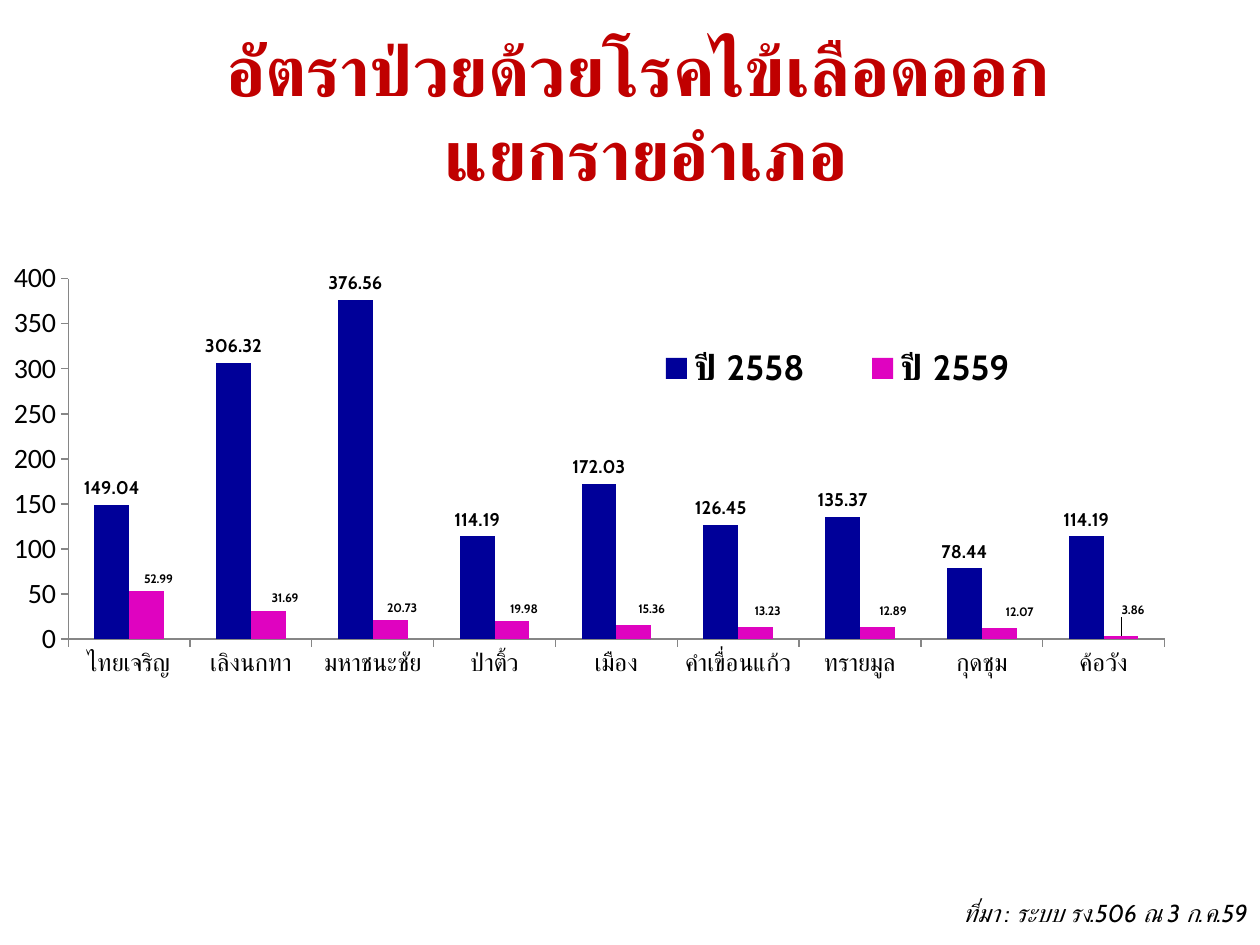
from lxml import etree
from pptx import Presentation
from pptx.chart.data import CategoryChartData
from pptx.dml.color import RGBColor
from pptx.enum.chart import XL_CHART_TYPE, XL_LABEL_POSITION, XL_LEGEND_POSITION, XL_TICK_MARK
from pptx.enum.text import MSO_ANCHOR, PP_ALIGN
from pptx.oxml.ns import qn
from pptx.util import Inches, Pt

COLUMNS = XL_CHART_TYPE.COLUMN_CLUSTERED
OUTSIDE_END = XL_LABEL_POSITION.OUTSIDE_END
LEGEND_RIGHT = XL_LEGEND_POSITION.RIGHT
TICK_NONE, TICK_OUT = XL_TICK_MARK.NONE, XL_TICK_MARK.OUTSIDE
CENTER, RIGHT = PP_ALIGN.CENTER, PP_ALIGN.RIGHT
MIDDLE, TOP = MSO_ANCHOR.MIDDLE, MSO_ANCHOR.TOP

DISTRICTS = ["ไทยเจริญ", "เลิงนกทา", "มหาชนะชัย", "ป่าติ้ว", "เมือง",
             "คำเขื่อนแก้ว", "ทรายมูล", "กุดชุม", "ค้อวัง"]
RATES = {
    "ปี 2558": [149.04, 306.32, 376.56, 114.19, 172.03, 126.45, 135.37, 78.44, 114.19],
    "ปี 2559": [52.99, 31.69, 20.73, 19.98, 15.36, 13.23, 12.89, 12.07, 3.86],
}
YEAR_COLORS = ["000099", "DF03C0"]
YEAR_LABEL_SIZES = [10.5, 7]
LABEL_SHIFTS = [(0.01, 0), (0.014, 0), (0.01, 0), (0.01, 0), (0.015, -0.01),
                (0.01, -0.01), (0.013, -0.01), (0.017, -0.01), (0.01, -0.03)]


def color(hex_value):
    return RGBColor.from_string(hex_value)


def manual_layout(x, y, w=None, h=None, inner=False):
    layout = etree.Element(qn("c:layout"))
    manual = etree.SubElement(layout, qn("c:manualLayout"))
    settings = [("layoutTarget", "inner" if inner else None)]
    if w is not None:
        settings += [("xMode", "edge"), ("yMode", "edge")]
    settings += [("x", x), ("y", y), ("w", w), ("h", h)]
    for tag, value in settings:
        if value is not None:
            etree.SubElement(manual, qn(f"c:{tag}")).set("val", str(value))
    return layout


class SlideWriter:
    display_font = "Cabin"
    number_font = "Calibri"
    ink = "000000"
    axis_line = "868686"

    def __init__(self, slide):
        self.slide = slide

    def style(self, font, size, name=display_font, hex_value=ink, bold=False, italic=False):
        font.size, font.name = Pt(size), name
        font.bold, font.italic = bold, italic
        font.color.rgb = color(hex_value)

    def text(self, words, left, top, width, height, size, align, anchor=TOP, **look):
        box = self.slide.shapes.add_textbox(
            Inches(left), Inches(top), Inches(width), Inches(height))
        frame = box.text_frame
        frame.word_wrap = True
        frame.vertical_anchor = anchor
        frame.text = words
        for paragraph in frame.paragraphs:
            paragraph.alignment = align
            for run in paragraph.runs:
                self.style(run.font, size, **look)
                complex_font = etree.SubElement(run.font._element, qn("a:cs"))
                complex_font.set("typeface", self.display_font)

    def column_chart(self, left, top, width, height):
        rates = CategoryChartData(number_format="0.00")
        rates.categories = DISTRICTS
        for year, values in RATES.items():
            rates.add_series(year, values)
        chart = self.slide.shapes.add_chart(
            COLUMNS, Inches(left), Inches(top), Inches(width), Inches(height), rates).chart
        chart.has_title = False
        self.style(chart.font, 10, self.number_font)
        area = chart.plots[0]._element.getparent()
        for old in area.findall(qn("c:layout")):
            area.remove(old)
        area.insert(0, manual_layout(0.057, 0.051, 0.916, 0.799, inner=True))
        self.axis(chart.category_axis, 14, self.display_font)
        self.axis(chart.value_axis, 16, self.number_font)
        chart.value_axis.minimum_scale = 0
        chart.value_axis.maximum_scale = 400
        chart.value_axis.major_unit = 50
        chart.value_axis.tick_labels.number_format = "General"
        chart.value_axis.tick_labels.number_format_is_linked = False
        self.legend(chart)
        plot = chart.plots[0]
        plot.gap_width, plot.overlap = 150, 0
        plot.vary_by_categories = False
        for series, fill, size in zip(plot.series, YEAR_COLORS, YEAR_LABEL_SIZES):
            series.format.fill.solid()
            series.format.fill.fore_color.rgb = color(fill)
            series.invert_if_negative = False
            labels = series.data_labels
            labels.show_value = True
            labels.position = OUTSIDE_END
            self.style(labels.font, size, bold=True)
        self.shift_labels(plot.series[1], YEAR_LABEL_SIZES[1])

    def axis(self, axis, size, font_name):
        axis.has_major_gridlines = False
        axis.major_tick_mark, axis.minor_tick_mark = TICK_OUT, TICK_NONE
        axis.format.line.color.rgb = color(self.axis_line)
        self.style(axis.tick_labels.font, size, font_name)

    def legend(self, chart):
        chart.has_legend = True
        legend = chart.legend
        legend.position = LEGEND_RIGHT
        legend.include_in_layout = False
        self.style(legend.font, 20, bold=True)
        element = legend._element
        for old in element.findall(qn("c:layout")):
            element.remove(old)
        element.find(qn("c:legendPos")).addnext(manual_layout(0.51, 0.17, 0.38, 0.16))

    def shift_labels(self, series, size):
        for index, shift in enumerate(LABEL_SHIFTS):
            label = series.points[index].data_label
            self.style(label.font, size, bold=True)
            label.position = OUTSIDE_END
            for entry in series.data_labels._element.findall(qn("c:dLbl")):
                position = entry.find(qn("c:idx"))
                if position.get("val") == str(index):
                    position.addnext(manual_layout(*shift))


def main():
    deck = Presentation()
    deck.slide_width, deck.slide_height = Inches(10), Inches(7.5)
    writer = SlideWriter(deck.slides.add_slide(deck.slide_layouts[6]))
    writer.text("อัตราป่วยด้วยโรคไข้เลือดออก \vแยกรายอำเภอ", 0.5, 0.25, 9.25, 1.25,
                40, CENTER, MIDDLE, hex_value="C00000", bold=True)
    writer.column_chart(0, 2.03, 9.5, 3.58)
    writer.text("ที่มา : ระบบ รง.506 ณ 3 ก.ค.59", 5.75, 7.08, 4.25, 0.34,
                14, RIGHT, italic=True)
    deck.save("out.pptx")


if __name__ == "__main__":
    main()
